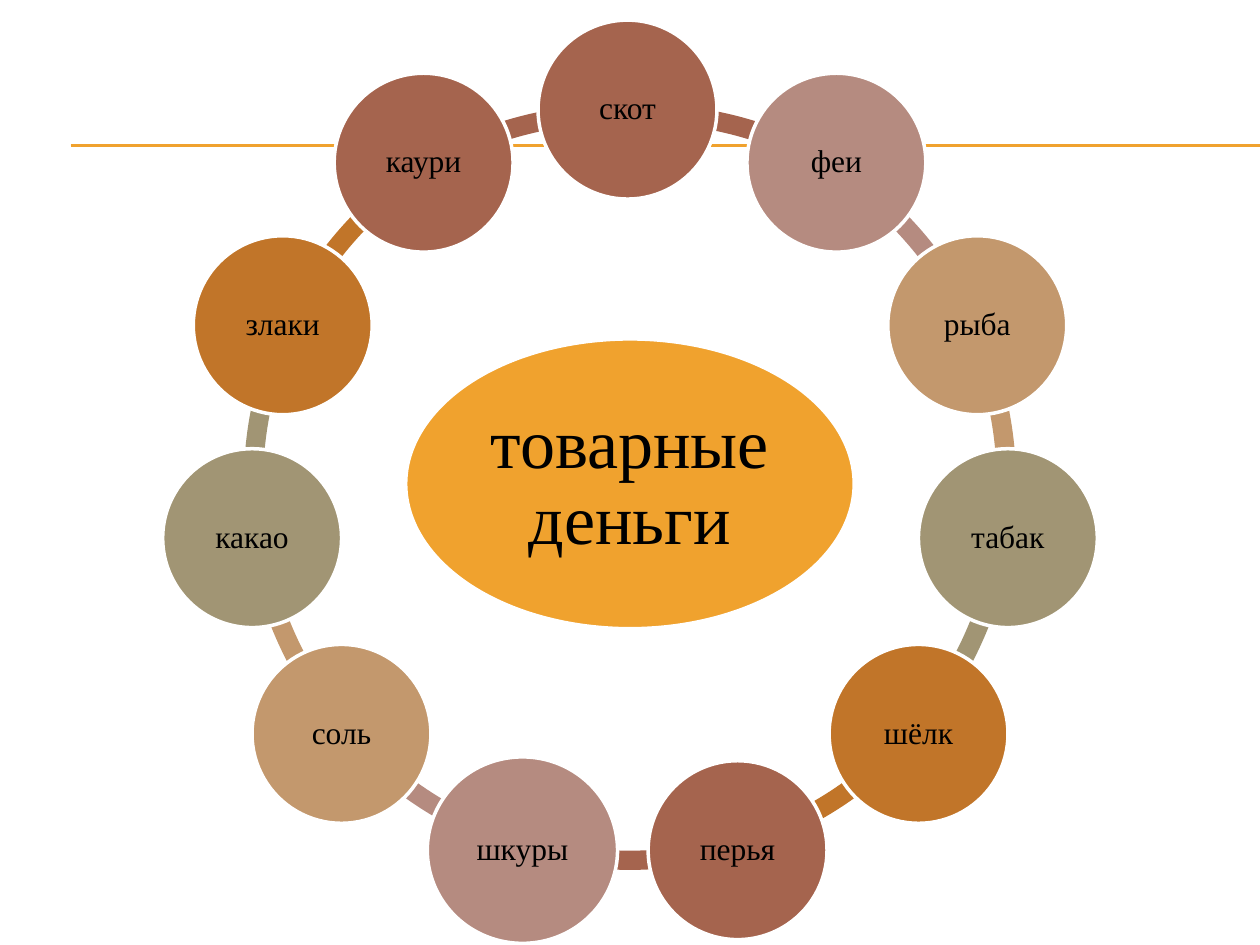
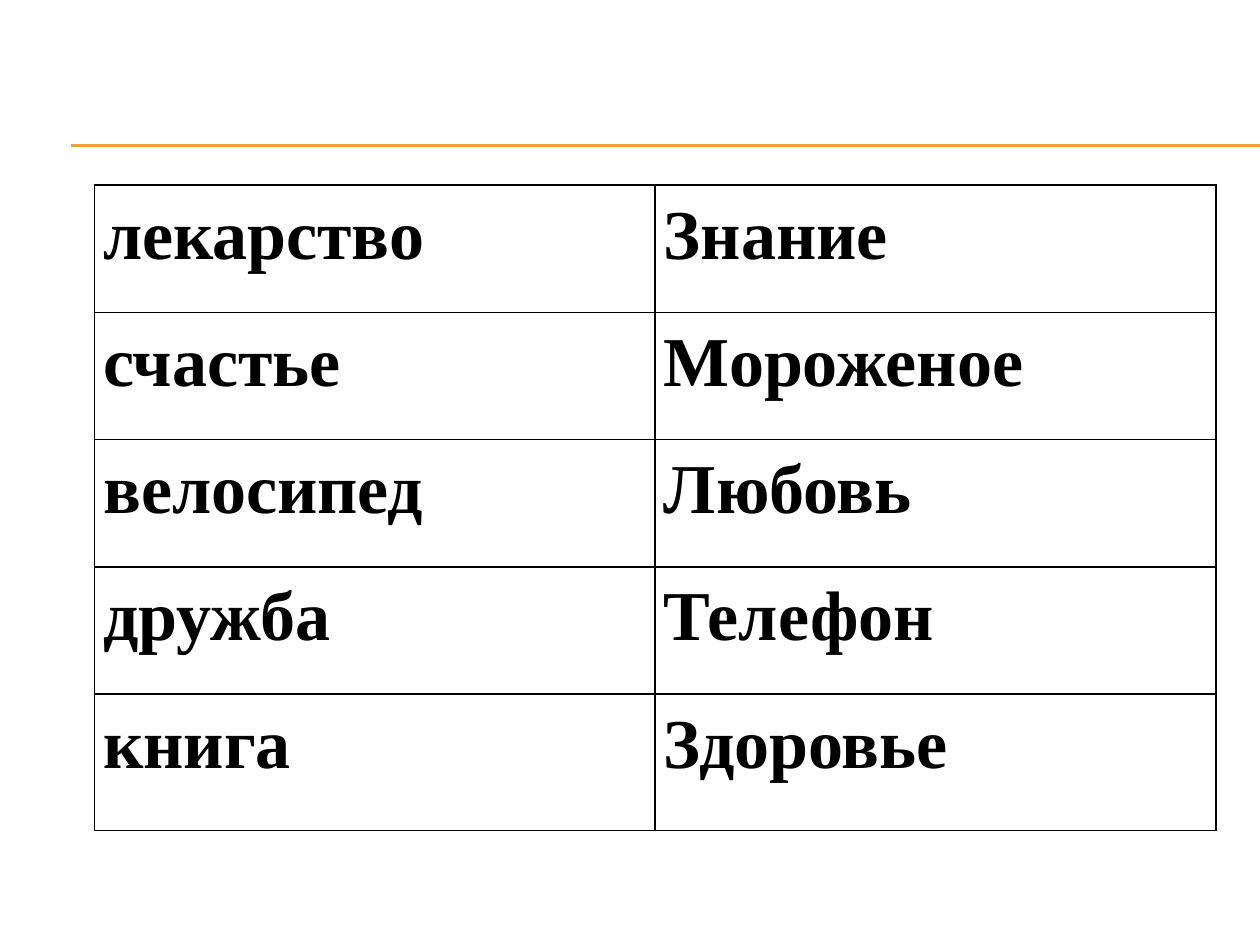
from dataclasses import dataclass
from itertools import cycle
from math import cos, radians, sin

from lxml import etree
from pptx import Presentation, util as u
from pptx.dml.color import RGBColor
from pptx.enum import shapes, text
from pptx.oxml import ns


@dataclass(frozen=True)
class Theme:
    font: str = "Times New Roman"
    ink: str = "000000"
    paper: str = "FFFFFF"
    accent: str = "F0A22E"
    ring: tuple = ("A5644E", "B58B80", "C3986D", "A19574", "C17529")
    large: int = 40
    label: int = 18
    rule: float = 0.75
    outline: float = 2
    border: float = 1


GOODS = ("скот", "феи", "рыба", "табак", "шёлк", "перья",
         "шкуры", "соль", "какао", "злаки", "каури")
WORD_PAIRS = (
    ("лекарство", "Знание"),
    ("счастье", "Мороженое"),
    ("велосипед", "Любовь"),
    ("дружба", "Телефон"),
    ("книга", "Здоровье"),
)

CENTRE_X, CENTRE_Y = 5, 3.84
ORBIT = 3.03
ARC_SIZE = 6.13
ARC_THICKNESS = 0.025
STEP = 360 / len(GOODS)
# Goods that leave the regular ring
MOVED_CENTRES = {"скот": (4.98, 0.87)}
NODE_SIZES = {"шкуры": (1.51, 1.48)}
# Arcs that meet the moved circle: centre x, centre y, start and end in degrees
MOVED_ARCS = {"скот": (5.09, 3.89, 267.91, 300.66),
              "каури": (4.9, 3.89, 239.38, 271.47)}


class Deck:
    def __init__(self, theme):
        self.theme = theme
        self.presentation = Presentation()
        self.presentation.slide_width = u.Inches(10)
        self.presentation.slide_height = u.Inches(7.5)
        self.slide = None

    def add_slide(self):
        """Start a slide with the shared double rule."""
        layout = self.presentation.slide_layouts[6]
        self.slide = self.presentation.slides.add_slide(layout)
        fill = self.slide.background.fill
        fill.solid()
        fill.fore_color.rgb = RGBColor.from_string(self.theme.paper)
        for y in (1.15, 1.16):
            self.line(0.56, y, 10, y)

    def line(self, x1, y1, x2, y2):
        connector = self.slide.shapes.add_connector(
            shapes.MSO_CONNECTOR.STRAIGHT, *map(u.Inches, (x1, y1, x2, y2)))
        connector.line.color.rgb = RGBColor.from_string(self.theme.accent)
        connector.line.width = u.Pt(self.theme.rule)
        etree.SubElement(connector._element.spPr, ns.qn("a:effectLst"))

    def centred_shape(self, kind, x, y, width, height, color):
        """Add a filled shape around the centre point x, y."""
        shape = self.slide.shapes.add_shape(kind, *map(
            u.Inches, (x - width / 2, y - height / 2, width, height)))
        shape.shadow.inherit = False
        shape.fill.solid()
        shape.fill.fore_color.rgb = RGBColor.from_string(color)
        shape.line.fill.background()
        return shape

    def arc(self, x, y, start, end, color):
        shape = self.centred_shape(shapes.MSO_SHAPE.BLOCK_ARC, x, y,
                                   ARC_SIZE, ARC_SIZE, color)
        # Angles are kept in 60000ths of a degree, adjustments in 100000ths
        for index, value in enumerate((start % 360 * 0.6, end % 360 * 0.6,
                                       ARC_THICKNESS)):
            shape.adjustments[index] = value

    def ellipse(self, x, y, width, height, color, wording, size):
        shape = self.centred_shape(shapes.MSO_SHAPE.OVAL, x, y,
                                   width, height, color)
        shape.line.color.rgb = RGBColor.from_string(self.theme.paper)
        shape.line.width = u.Pt(self.theme.outline)
        frame = shape.text_frame
        frame.word_wrap = True
        frame.vertical_anchor = text.MSO_ANCHOR.MIDDLE
        frame.margin_left = frame.margin_right = u.Inches(0.02)
        frame.margin_top = frame.margin_bottom = u.Inches(0.02)
        paragraph = frame.paragraphs[0]
        paragraph.alignment = text.PP_ALIGN.CENTER
        paragraph.line_spacing = 0.9
        self.run(paragraph, wording, size)

    def run(self, paragraph, wording, size, bold=False):
        run = paragraph.add_run()
        run.text = wording
        run.font.name = self.theme.font
        run.font.size = u.Pt(size)
        run.font.bold = bold
        run.font.color.rgb = RGBColor.from_string(self.theme.ink)

    def table(self, rows, x, y, column_width, row_heights):
        columns = len(rows[0])
        frame = self.slide.shapes.add_table(len(rows), columns, *map(
            u.Inches, (x, y, column_width * columns, sum(row_heights))))
        table = frame.table
        table.first_row = table.horz_banding = False
        for column in table.columns:
            column.width = u.Inches(column_width)
        for row, height, words in zip(table.rows, row_heights, rows):
            row.height = u.Inches(height)
            for cell, word in zip(row.cells, words):
                self.cell(cell, word)

    def cell(self, cell, word):
        cell.margin_left = cell.margin_right = u.Inches(0.07)
        cell.margin_top = cell.margin_bottom = 0
        self.borders(cell)
        cell.fill.background()
        paragraph = cell.text_frame.paragraphs[0]
        paragraph.line_spacing = 1.15
        self.run(paragraph, word, self.theme.large, bold=True)

    def borders(self, cell):
        properties = cell._tc.get_or_add_tcPr()
        for side in ("a:lnL", "a:lnR", "a:lnT", "a:lnB"):
            border = etree.SubElement(properties, ns.qn(side),
                                      w=str(u.Pt(self.theme.border)))
            fill = etree.SubElement(border, ns.qn("a:solidFill"))
            etree.SubElement(fill, ns.qn("a:srgbClr"), val=self.theme.ink)


def add_commodity_ring(deck):
    deck.add_slide()
    theme = deck.theme
    ring = [(goods, index * STEP - 90, color) for index, (goods, color)
            in enumerate(zip(GOODS, cycle(theme.ring)))]
    for goods, angle, color in ring:
        place = MOVED_ARCS.get(goods, (CENTRE_X, CENTRE_Y, angle, angle + STEP))
        deck.arc(*place, color)
    deck.ellipse(CENTRE_X, CENTRE_Y, 3.56, 2.3, theme.accent,
                 "товарные деньги", theme.large)
    for goods, angle, color in ring:
        on_orbit = (CENTRE_X + ORBIT * cos(radians(angle)),
                    CENTRE_Y + ORBIT * sin(radians(angle)))
        x, y = MOVED_CENTRES.get(goods, on_orbit)
        width, height = NODE_SIZES.get(goods, (1.42, 1.42))
        deck.ellipse(x, y, width, height, color, goods, theme.label)


def add_word_table(deck):
    deck.add_slide()
    deck.table(WORD_PAIRS, 0.75, 1.47, 4.45, [1.01] * 4 + [1.08])


def main():
    deck = Deck(Theme())
    add_commodity_ring(deck)
    add_word_table(deck)
    deck.presentation.save("out.pptx")


if __name__ == "__main__":
    main()
